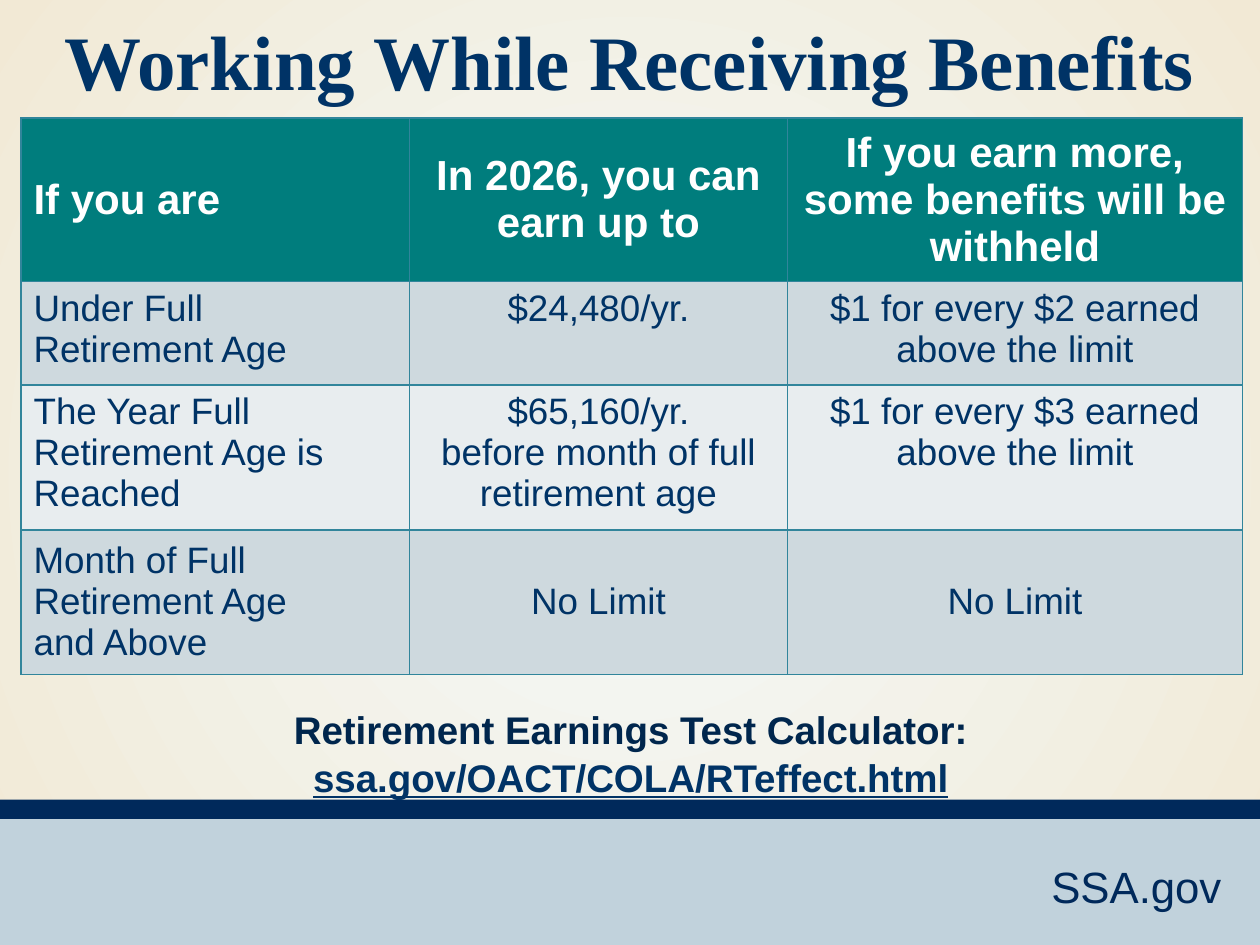
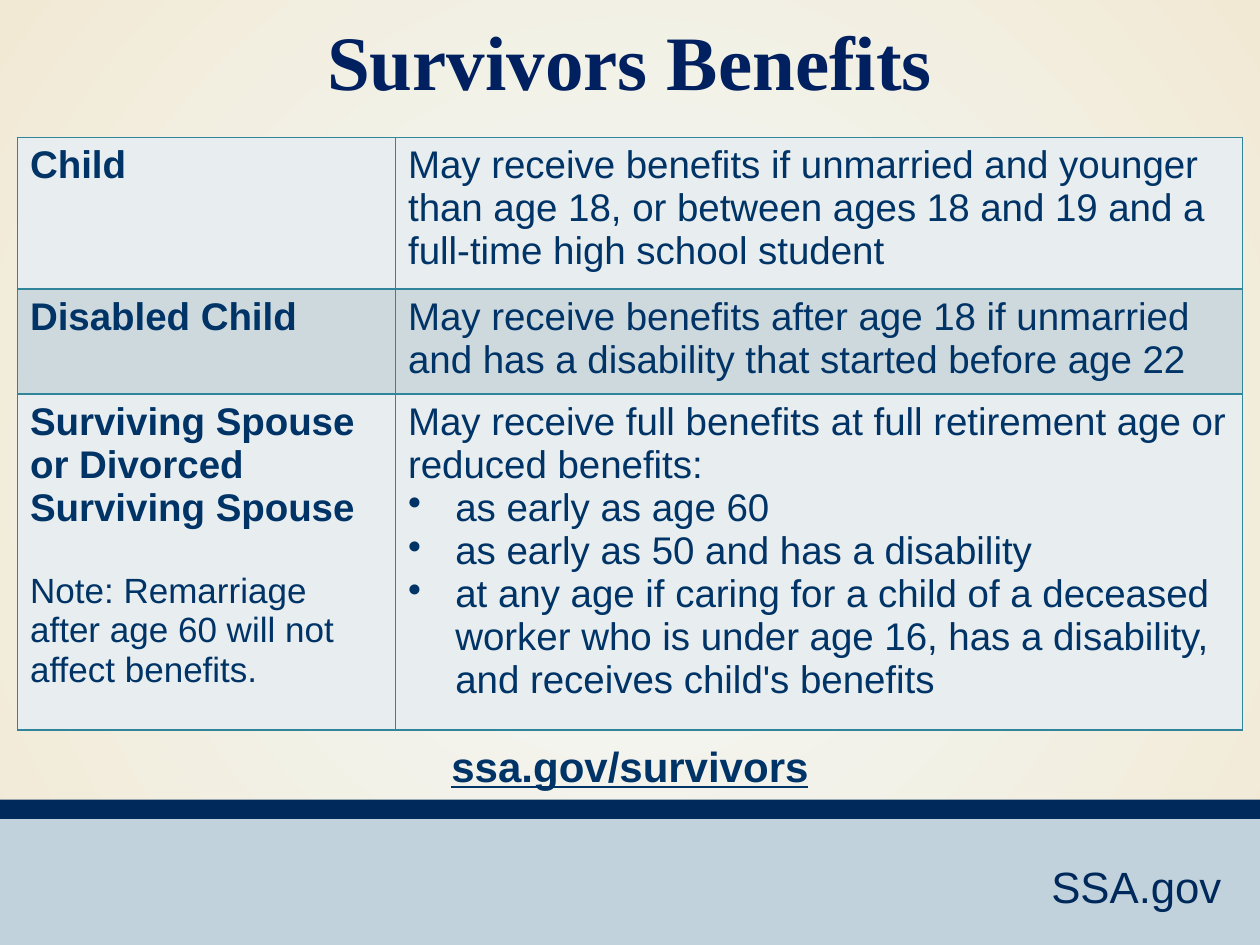
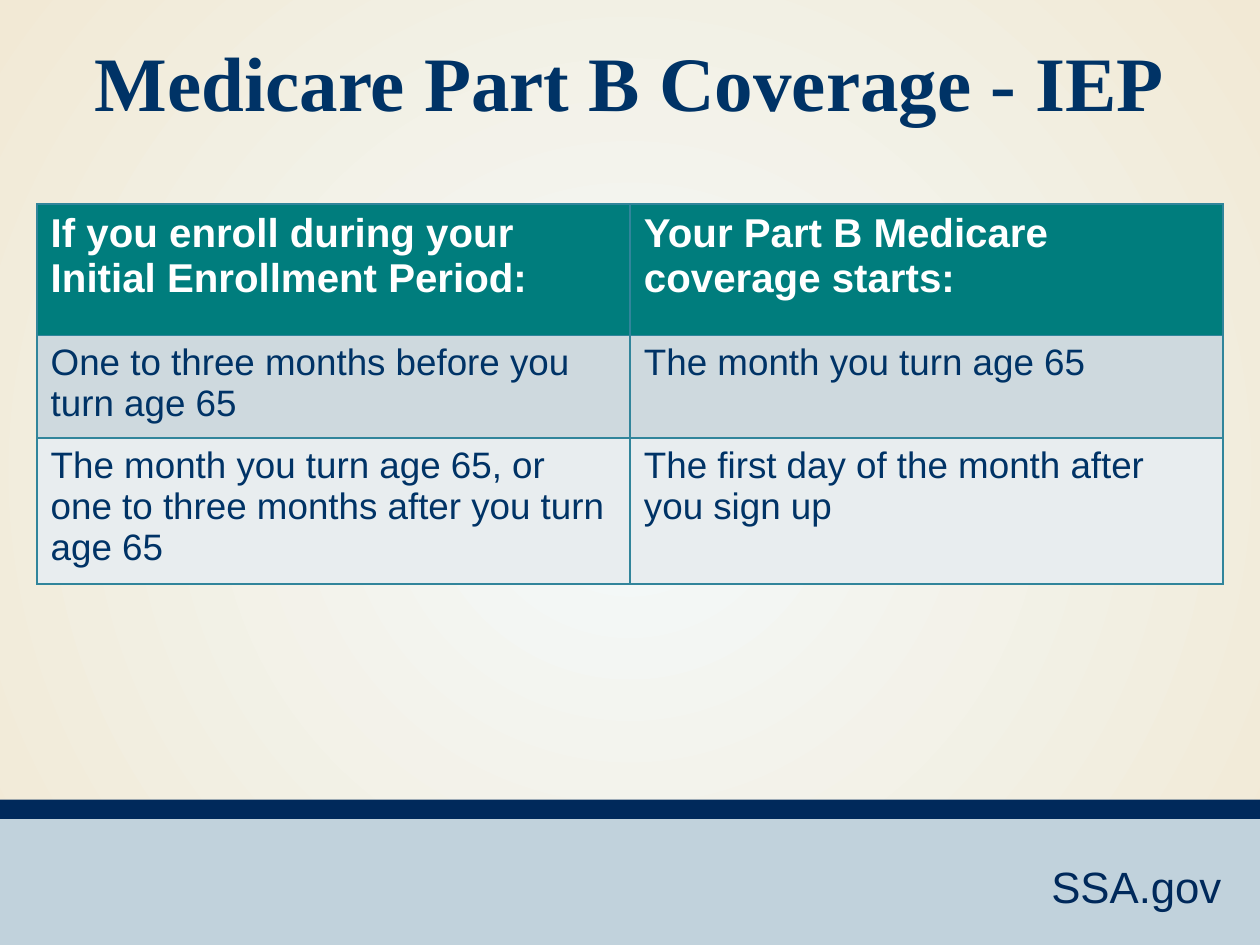
from lxml.etree import SubElement
from pptx import Presentation
from pptx.dml.color import RGBColor
from pptx.enum.shapes import MSO_SHAPE
from pptx.enum.text import MSO_ANCHOR, PP_ALIGN
from pptx.oxml.ns import qn
from pptx.util import Pt

# Shared colours, fonts and sizes
NAVY = RGBColor(0x00, 0x33, 0x66)
DEEP_NAVY = RGBColor(0x00, 0x26, 0x4D)
TITLE_BLUE = RGBColor(0x00, 0x20, 0x60)
BAND_NAVY = RGBColor(0x00, 0x29, 0x5B)
BAND_GREY = RGBColor(0xC1, 0xD2, 0xDC)
TEAL = RGBColor(0x00, 0x7D, 0x7D)
BORDER = RGBColor(0x31, 0x85, 0x9B)
ROW_DARK = RGBColor(0xCE, 0xD9, 0xDE)
ROW_LIGHT = RGBColor(0xE8, 0xED, 0xEF)
WHITE = RGBColor(0xFF, 0xFF, 0xFF)
GLOW_CENTRE = RGBColor(0xF3, 0xFA, 0xFB)
GLOW_EDGE = RGBColor(0xF2, 0xE9, 0xD5)
SLIDE_WIDTH, SLIDE_HEIGHT = 720, 540
BULLET_INDENT = 27

TITLE = {"name": "Times New Roman", "size": Pt(44), "bold": True, "color": NAVY}
FOOTER = {"name": "Arial", "size": Pt(25), "color": BAND_NAVY}
BODY = {"name": "Arial", "size": Pt(21), "color": NAVY}
HEADER = {**BODY, "size": Pt(24), "bold": True, "color": WHITE}
LINK = {**BODY, "bold": True, "underline": True}


def set_attributes(target, values):
    for name, value in values.items():
        setattr(target, name, value)


def add_bullet(paragraph):
    properties = paragraph._p.get_or_add_pPr()
    properties.set("marL", str(Pt(BULLET_INDENT)))
    properties.set("indent", str(-Pt(BULLET_INDENT)))
    SubElement(properties, qn("a:buChar"), char="•")


def write_paragraphs(frame, entries, style, align=PP_ALIGN.LEFT):
    """Each entry is a text, or a text with style values that differ."""
    for index, entry in enumerate(entries):
        text, changes = (entry, {}) if isinstance(entry, str) else entry
        values = {**style, **changes}
        paragraph = frame.paragraphs[0] if index == 0 else frame.add_paragraph()
        paragraph.text = text
        paragraph.alignment = align
        if "space_before" in values:
            paragraph.space_before = values.pop("space_before")
        if values.pop("bullet", False):
            add_bullet(paragraph)
        color = values.pop("color")
        for run in paragraph.runs:
            set_attributes(run.font, values)
            run.font.color.rgb = color


def add_text(slide, box, entries, style, align=PP_ALIGN.CENTER, top_margin=6):
    frame = slide.shapes.add_textbox(*map(Pt, box)).text_frame
    set_attributes(frame, {"word_wrap": True, "margin_top": Pt(top_margin),
                           "vertical_anchor": MSO_ANCHOR.TOP})
    write_paragraphs(frame, entries, style, align)


def add_band(slide, box, color):
    band = slide.shapes.add_shape(MSO_SHAPE.RECTANGLE, *map(Pt, box))
    band.shadow.inherit = False
    band.fill.solid()
    band.fill.fore_color.rgb = color
    band.line.fill.background()


def add_footer(slide, top):
    add_band(slide, (0, top + 7, SLIDE_WIDTH, SLIDE_HEIGHT - top - 7), BAND_GREY)
    add_band(slide, (0, top, SLIDE_WIDTH, 11), BAND_NAVY)
    add_text(slide, (484, top + 28, 221, 37.5), ["SSA.gov"], FOOTER, PP_ALIGN.RIGHT)


def style_cell(cell, fill, margins):
    properties = cell._tc.get_or_add_tcPr()
    for side in ("lnL", "lnR", "lnT", "lnB"):
        line = SubElement(properties, qn(f"a:{side}"), w=str(Pt(1)))
        SubElement(SubElement(line, qn("a:solidFill")), qn("a:srgbClr"), val=str(BORDER))
    cell.fill.solid()
    cell.fill.fore_color.rgb = fill
    across, down = map(Pt, margins)
    set_attributes(cell, {"margin_left": across, "margin_right": across,
                          "margin_top": down, "margin_bottom": down})


def add_benefit_table(slide, corner, widths, heights, rows, header=None, body=BODY,
                      aligns=(), middle_rows=(), margins=(7.2, 3.6)):
    """Rows alternate dark and light below a header, light first without one."""
    table = slide.shapes.add_table(
        len(rows), len(widths), *map(Pt, (*corner, sum(widths), sum(heights)))).table
    set_attributes(table, {"first_row": header is not None, "horz_banding": False})
    for column, width in zip(table.columns, widths):
        column.width = Pt(width)
    for row_index, (row, height) in enumerate(zip(rows, heights)):
        table.rows[row_index].height = Pt(height)
        is_header = header is not None and row_index == 0
        fill = TEAL if is_header else (ROW_LIGHT, ROW_DARK)[row_index % 2]
        for column_index, entries in enumerate(row):
            cell = table.cell(row_index, column_index)
            style_cell(cell, fill, margins)
            cell.vertical_anchor = (MSO_ANCHOR.MIDDLE if row_index in middle_rows
                                    else MSO_ANCHOR.TOP)
            align = aligns[column_index] if aligns else PP_ALIGN.LEFT
            write_paragraphs(cell.text_frame, entries, header if is_header else body, align)


def set_background(master):
    fill = master.background.fill
    fill.gradient()
    for stop, color, position in zip(fill.gradient_stops, (GLOW_CENTRE, GLOW_EDGE), (0, 1)):
        stop.color.rgb = color
        stop.position = position
    gradient = master.element.find(f".//{qn('p:bgPr')}/{qn('a:gradFill')}")
    for linear in gradient.findall(qn("a:lin")):
        gradient.remove(linear)
    circle = SubElement(gradient, qn("a:path"), path="circle")
    SubElement(circle, qn("a:fillToRect"), dict.fromkeys("ltrb", "50000"))


def add_base_slide(presentation, title, title_top=0, title_color=NAVY):
    slide = presentation.slides.add_slide(presentation.slide_layouts[6])
    add_footer(slide, 457)
    add_text(slide, (0, title_top, SLIDE_WIDTH, 55), [title],
             {**TITLE, "color": title_color}, top_margin=8)
    return slide


def add_working_slide(presentation):
    slide = add_base_slide(presentation, "Working While Receiving Benefits")
    rows = [
        [["If you are"], ["In 2026, you can earn up to"],
         ["If you earn more, some benefits will be withheld"]],
        [["Under Full", "Retirement Age"], ["$24,480/yr."],
         ["$1 for every $2 earned above the limit"]],
        [["The Year Full Retirement Age is Reached"],
         ["$65,160/yr.\nbefore month of full retirement age"],
         ["$1 for every $3 earned above the limit"]],
        [["Month of Full Retirement Age\nand Above"], ["No Limit"], ["No Limit"]],
    ]
    add_benefit_table(slide, (12, 67.3), (222, 216, 260), (87, 59, 79, 77.5), rows, HEADER,
                      aligns=(PP_ALIGN.LEFT, PP_ALIGN.CENTER, PP_ALIGN.CENTER),
                      middle_rows=(0, 3))
    # Calculator address
    heading = {"color": DEEP_NAVY, "underline": None}
    add_text(slide, (31, 397.5, 659, 58),
             [("Retirement Earnings Test Calculator:", heading),
              ("ssa.gov/OACT/COLA/RTeffect.html", {"space_before": Pt(1)})],
             {**LINK, "size": Pt(22)})


def add_survivors_slide(presentation):
    slide = add_base_slide(presentation, "Survivors Benefits", title_color=TITLE_BLUE)
    bold, bullet = {"bold": True}, {"bullet": True}
    note = {"size": Pt(20), "space_before": Pt(24.5)}
    rows = [
        [[("Child", bold)],
         ["May receive benefits if unmarried and younger than age 18, "
          "or between ages 18 and 19 and a full-time high school student"]],
        [[("Disabled Child", bold)],
         ["May receive benefits after age 18 if unmarried "
          "and has a disability that started before age 22"]],
        [[("Surviving Spouse", bold), ("or Divorced Surviving Spouse", bold),
          ("Note: Remarriage after age 60 will not affect benefits.", note)],
         ["May receive full benefits at full retirement age or reduced benefits:",
          ("as early as age 60", bullet),
          ("as early as 50 and has a disability", bullet),
          ("at any age if caring for a child of a deceased worker who is under age 16, "
           "has a disability, and receives child's benefits", bullet)]],
    ]
    add_benefit_table(slide, (10, 78.7), (216, 484), (80.7, 59.3, 179.5), rows,
                      body={**BODY, "size": Pt(22)})
    add_text(slide, (73, 417, 574, 36), ["ssa.gov/survivors"], {**LINK, "size": Pt(24)})


def add_medicare_slide(presentation):
    slide = add_base_slide(presentation, "Medicare Part B Coverage - IEP", title_top=12)
    rows = [
        [["If you enroll during your Initial Enrollment Period:"],
         ["Your Part B Medicare coverage starts:"]],
        [["One to three months before you turn age 65"], ["The month you turn age 65"]],
        [["The month you turn age 65, or one to three months after you turn age 65"],
         ["The first day of the month after you sign up"]],
    ]
    add_benefit_table(slide, (21, 116.5), (339, 339), (75.3, 55, 79), rows,
                      {**HEADER, "size": Pt(23)}, margins=(8, 4))


def main():
    presentation = Presentation()
    set_attributes(presentation, {"slide_width": Pt(SLIDE_WIDTH),
                                  "slide_height": Pt(SLIDE_HEIGHT)})
    set_background(presentation.slide_master)
    add_working_slide(presentation)
    add_survivors_slide(presentation)
    add_medicare_slide(presentation)
    presentation.save("out.pptx")


if __name__ == "__main__":
    main()
